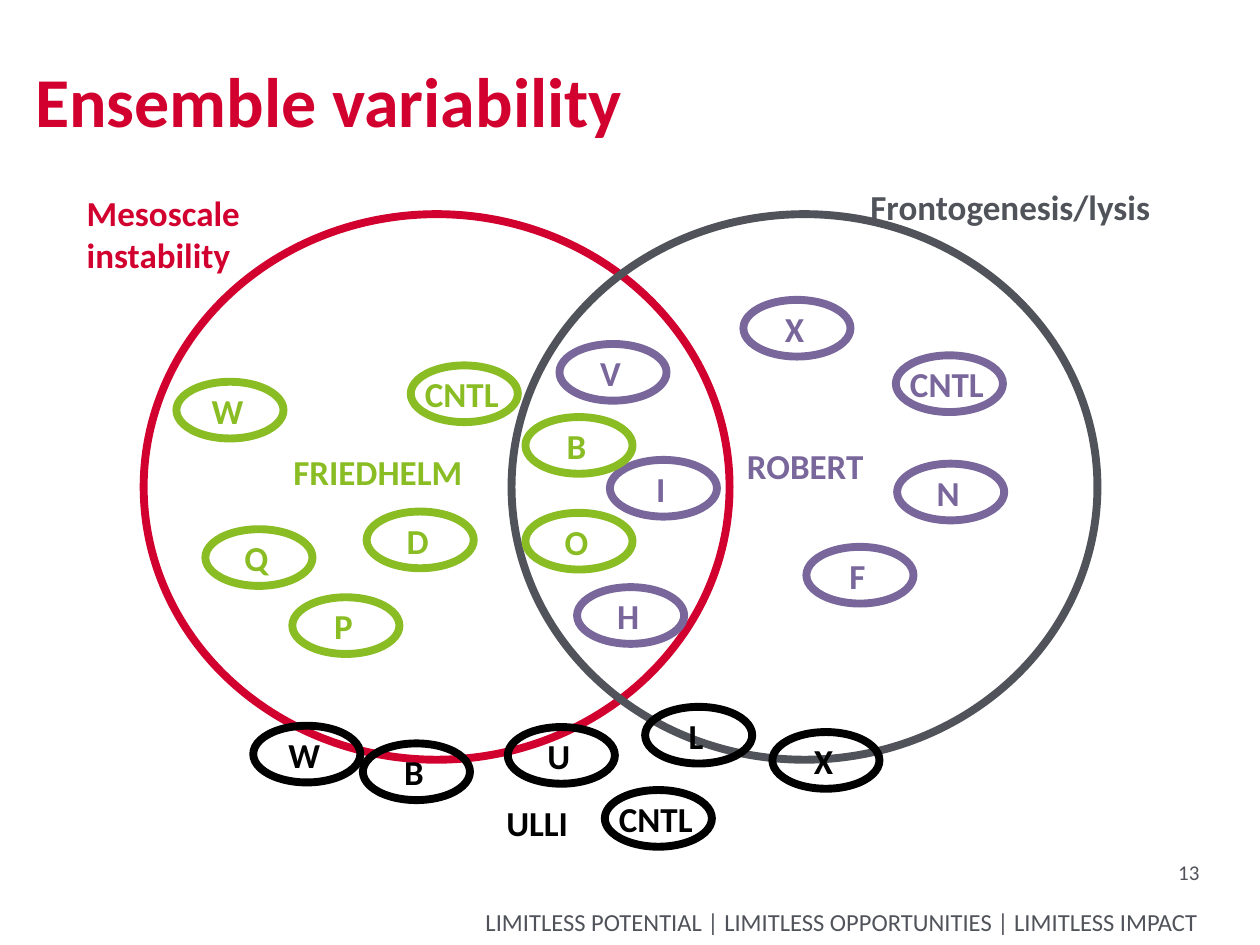
from pptx import Presentation
from pptx.dml.color import RGBColor
from pptx.enum.shapes import MSO_SHAPE
from pptx.enum.text import MSO_ANCHOR, PP_ALIGN
from pptx.util import Pt

PX = 9144  # 100 px to the inch
COLORS = {
    "red": "D2002E",
    "gray": "50535A",
    "violet": "79679C",
    "green": "8ABD24",
    "black": "000000",
}
LEFT, MID, RIGHT = PP_ALIGN.LEFT, PP_ALIGN.CENTER, PP_ALIGN.RIGHT


def add_oval(shapes, box, color):
    oval = shapes.add_shape(MSO_SHAPE.OVAL, *[n * PX for n in box])
    oval.shadow.inherit = False
    oval.fill.background()
    oval.line.color.rgb = RGBColor.from_string(COLORS[color])
    oval.line.width = Pt(4.5)


def add_text(shapes, box, text, color, size=20, bold=True, align=LEFT, **frame):
    """Add a text box; extra keywords become settings of its text frame."""
    body = shapes.add_textbox(*[n * PX for n in box]).text_frame
    body.text = text
    for key, value in {"word_wrap": True, **frame}.items():
        setattr(body, key, value)
    style = {"name": "Calibri", "size": Pt(size), "bold": bold}
    for para in body.paragraphs:
        para.alignment = align
        for key, value in style.items():
            setattr(para.font, key, value)
        para.font.color.rgb = RGBColor.from_string(COLORS[color])


deck = Presentation()
deck.slide_width, deck.slide_height = 1000 * PX, 750 * PX
shapes = deck.slides.add_slide(deck.slide_layouts[6]).shapes

# Title, footer and page number
flush = {f"margin_{side}": 0 for side in ("left", "top", "right", "bottom")}
low = {**flush, "vertical_anchor": MSO_ANCHOR.BOTTOM}
footer = "LIMITLESS POTENTIAL | LIMITLESS OPPORTUNITIES | LIMITLESS IMPACT"
add_text(shapes, (211, 719, 740, 24), footer, "gray", 14, False, RIGHT, **low)
add_text(shapes, (28, 21, 906, 91), "Ensemble variability", "red", 40, **low)
add_text(shapes, (878, 682, 74, 28), "13", "gray", 12, False, RIGHT, **flush)

# The two overlapping sets
for left, color in ((114, "red"), (406, "gray")):
    add_oval(shapes, (left, 170, 465, 433), color)

# Names of the sets and of the ensembles
labels = [
    ((59, 147, 173, 77), "Mesoscale\ninstability", "red"),
    ((681, 142, 291, 44), "Frontogenesis/lysis", "gray"),
    ((223, 353, 173, 44), "FRIEDHELM", "green"),
    ((583, 348, 173, 44), "ROBERT", "violet"),
    ((392, 631, 173, 44), "ULLI", "black"),
]
for box, text, color in labels:
    add_text(shapes, box, text, color)

# Ensemble members: name, left and top of each oval
members = {
    "violet": [
        ("CNTL", 711, 282), ("V", 444, 273), ("H", 458, 466), ("I", 484, 365),
        ("F", 640, 434), ("N", 712, 368), ("X", 590, 238),
    ],
    "green": [
        ("CNTL", 326, 290), ("W", 140, 303), ("Q", 163, 420), ("P", 232, 474),
        ("D", 291, 406), ("O", 417, 407), ("B", 417, 331),
    ],
    "black": [
        ("CNTL", 480, 627), ("B", 288, 590), ("U", 403, 577), ("W", 201, 576),
        ("L", 512, 561), ("X", 613, 581),
    ],
}
for color, items in members.items():
    for name, left, top in items:
        group = shapes.add_group_shape().shapes
        add_oval(group, (left, top, 85, 45), color)
        add_text(group, (left - 19, top + 1, 119, 44), name, color, align=MID)

deck.save("out.pptx")
